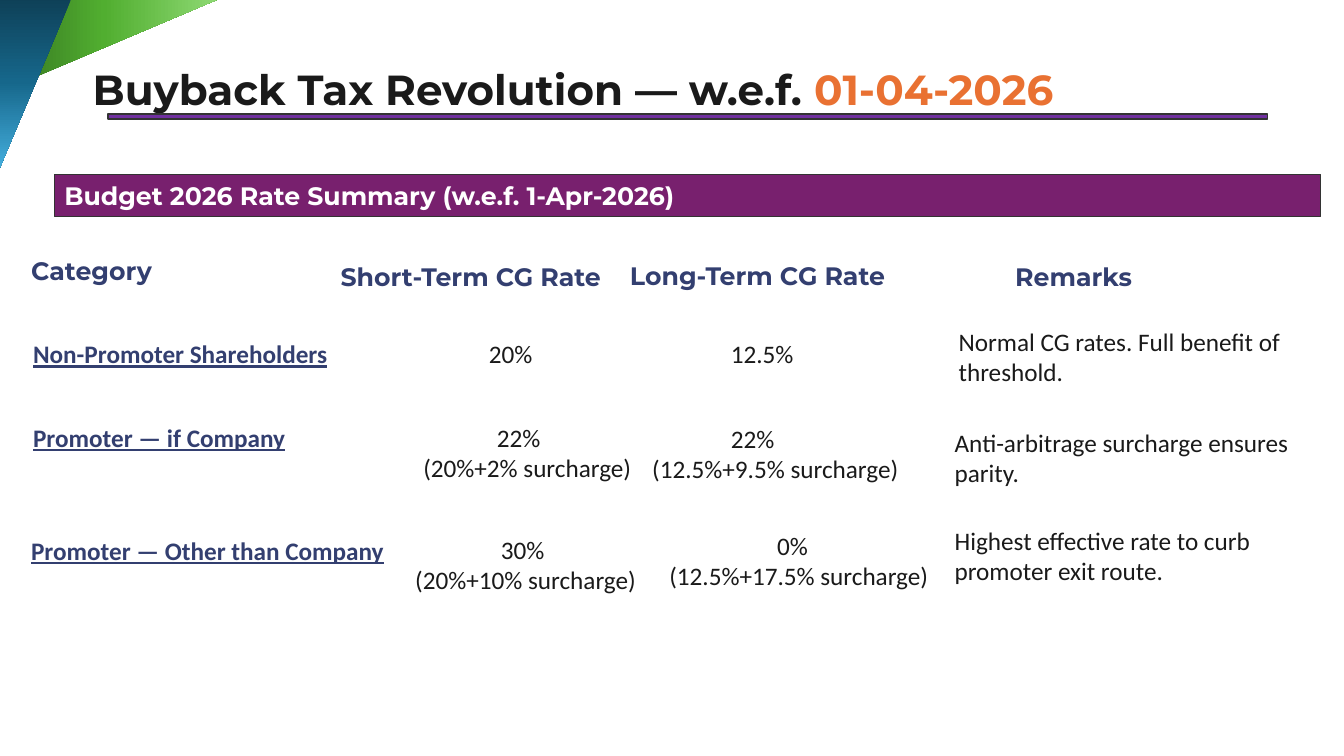
from dataclasses import dataclass

from lxml.etree import SubElement
from pptx import Presentation
from pptx.dml.color import RGBColor
from pptx.enum.shapes import MSO_SHAPE as Kind
from pptx.enum.text import MSO_ANCHOR as Anchor, MSO_AUTO_SIZE as Auto, PP_ALIGN as Align
from pptx.oxml.ns import qn
from pptx.util import Pt

SCALE = 9144
HEAD, BODY = "Montserrat", "Calibri"
INK, NAVY, WHITE = "1A1A1A", "333F70", "FFFFFF"
ORANGE, EDGE = "E97132", "333333"


@dataclass(frozen=True)
class Box:
    left: int
    top: int
    width: int
    height: int


@dataclass(frozen=True)
class Style:
    font: str
    color: str
    bold: bool = False
    line: bool = False
    size: int = 18


@dataclass(frozen=True)
class Line:
    text: str
    indent: int = 0


@dataclass(frozen=True)
class Note:
    box: Box
    style: Style
    lines: tuple[Line, ...]


@dataclass(frozen=True)
class Wedge:
    box: Box
    stops: tuple[str, str, str]
    turn: int = 0
    flip: bool = False


@dataclass(frozen=True)
class Bar:
    box: Box
    color: str


LABEL = Style(HEAD, NAVY, True)
GROUP = Style(BODY, NAVY, True, True)
PLAIN = Style(BODY, INK)
TITLE = Style(HEAD, INK, True, size=30)
DATE = Style(HEAD, ORANGE, True, size=30)
BANNER = Style(HEAD, WHITE, True)

WEDGES = (
    Wedge(Box(61, -64, 93, 219), ("34701F", "51AE30", "8ED973"), turn=90),
    Wedge(Box(-2, -2, 73, 173), ("0E4057", "16678B", "46B1E1"), flip=True),
)
RULE = Bar(Box(107, 113, 1150, 5), "7030A0")
BAND = Bar(Box(54, 173, 1256, 42), "78206E")

NOTES = (
    Note(Box(21, 248, 143, 40), LABEL, (Line("Category"),)),
    Note(Box(328, 254, 294, 40), LABEL, (Line("Short-Term CG Rate"),)),
    Note(Box(615, 253, 294, 40), LABEL, (Line("Long-Term CG Rate"),)),
    Note(Box(997, 254, 155, 40), LABEL, (Line("Remarks"),)),
    Note(Box(23, 331, 315, 40), GROUP, (Line("Non-Promoter Shareholders"),)),
    Note(Box(475, 331, 78, 40), PLAIN, (Line("20%"),)),
    Note(Box(715, 331, 94, 40), PLAIN, (Line("12.5%"),)),
    Note(Box(941, 319, 410, 71), PLAIN,
         (Line("Normal CG rates. Full benefit of threshold."),)),
    Note(Box(23, 414, 294, 40), GROUP, (Line("Promoter — if Company"),)),
    Note(Box(410, 414, 272, 71), PLAIN,
         (Line("22%", 73), Line("(20%+2% surcharge)"))),
    Note(Box(637, 415, 329, 71), PLAIN,
         (Line("22%", 78), Line("(12.5%+9.5% surcharge)"))),
    Note(Box(937, 419, 369, 71), PLAIN,
         (Line("Anti-arbitrage surcharge ensures parity."),)),
    Note(Box(21, 526, 382, 40), GROUP, (Line("Promoter — Other than Company"),)),
    Note(Box(402, 525, 254, 71), PLAIN,
         (Line("30%", 85), Line("(20%+10% surcharge)"))),
    Note(Box(637, 521, 320, 71), PLAIN,
         (Line("0%", 124), Line("(12.5%+17.5% surcharge)", 17))),
    Note(Box(937, 516, 376, 71), PLAIN,
         (Line("Highest effective rate to curb promoter exit route."),)),
)


def px(size: int) -> int:
    return size * SCALE


def place(box: Box) -> tuple[int, ...]:
    return px(box.left), px(box.top), px(box.width), px(box.height)


def rgb(code: str) -> RGBColor:
    return RGBColor.from_string(code)


def add_run(para, text: str, style: Style) -> None:
    run = para.add_run()
    run.text = text
    font = run.font
    font.name, font.size = style.font, Pt(style.size)
    font.bold, font.underline = style.bold, style.line
    font.color.rgb = rgb(style.color)


def add_wedge(slide, wedge: Wedge) -> None:
    shape = slide.shapes.add_shape(Kind.RIGHT_TRIANGLE, *place(wedge.box))
    shape.shadow.inherit = False
    shape.line.fill.background()
    shape.rotation = wedge.turn
    props = shape.element.spPr
    if wedge.flip:
        props.find(qn("a:xfrm")).set("flipV", "1")
    shape.fill.gradient()
    grad = props.find(qn("a:gradFill"))
    for child in list(grad):
        grad.remove(child)
    grad.set("rotWithShape", "1")
    stops = SubElement(grad, qn("a:gsLst"))
    for spot, code in zip((0, 48, 100), wedge.stops):
        stop = SubElement(stops, qn("a:gs"), pos=str(spot * 1000))
        SubElement(stop, qn("a:srgbClr"), val=code)
    SubElement(grad, qn("a:lin"), ang=str(270 * 60000), scaled="0")


def add_bar(slide, bar: Bar):
    shape = slide.shapes.add_shape(Kind.RECTANGLE, *place(bar.box))
    shape.shadow.inherit = False
    shape.fill.solid()
    shape.fill.fore_color.rgb = rgb(bar.color)
    shape.line.color.rgb = rgb(EDGE)
    shape.line.width = Pt(1)
    return shape


def add_title(slide) -> None:
    frame = slide.shapes.add_textbox(*place(Box(92, 4, 1060, 110))).text_frame
    frame.word_wrap = True
    frame.vertical_anchor = Anchor.BOTTOM
    frame.margin_left = frame.margin_right = 0
    frame.margin_top = frame.margin_bottom = 0
    para = frame.paragraphs[0]
    para.line_spacing = 0.9
    add_run(para, "Buyback Tax Revolution — w.e.f. ", TITLE)
    add_run(para, "01-04-2026", DATE)


def add_band(slide) -> None:
    frame = add_bar(slide, BAND).text_frame
    frame.word_wrap = True
    frame.vertical_anchor = Anchor.MIDDLE
    para = frame.paragraphs[0]
    para.alignment = Align.LEFT
    add_run(para, "Budget 2026 Rate Summary (w.e.f. 1-Apr-2026)", BANNER)


def add_note(slide, note: Note) -> None:
    frame = slide.shapes.add_textbox(*place(note.box)).text_frame
    frame.word_wrap = True
    frame.auto_size = Auto.SHAPE_TO_FIT_TEXT
    for rank, line in enumerate(note.lines):
        para = frame.add_paragraph() if rank else frame.paragraphs[0]
        if line.indent:
            para._p.get_or_add_pPr().set("marL", str(px(line.indent)))
        add_run(para, line.text, note.style)


def main() -> None:
    deck = Presentation()
    deck.slide_width, deck.slide_height = px(1333), px(750)
    slide = deck.slides.add_slide(deck.slide_layouts[6])
    for wedge in WEDGES:
        add_wedge(slide, wedge)
    add_title(slide)
    add_bar(slide, RULE)
    add_band(slide)
    for note in NOTES:
        add_note(slide, note)
    deck.save("out.pptx")


if __name__ == "__main__":
    main()
